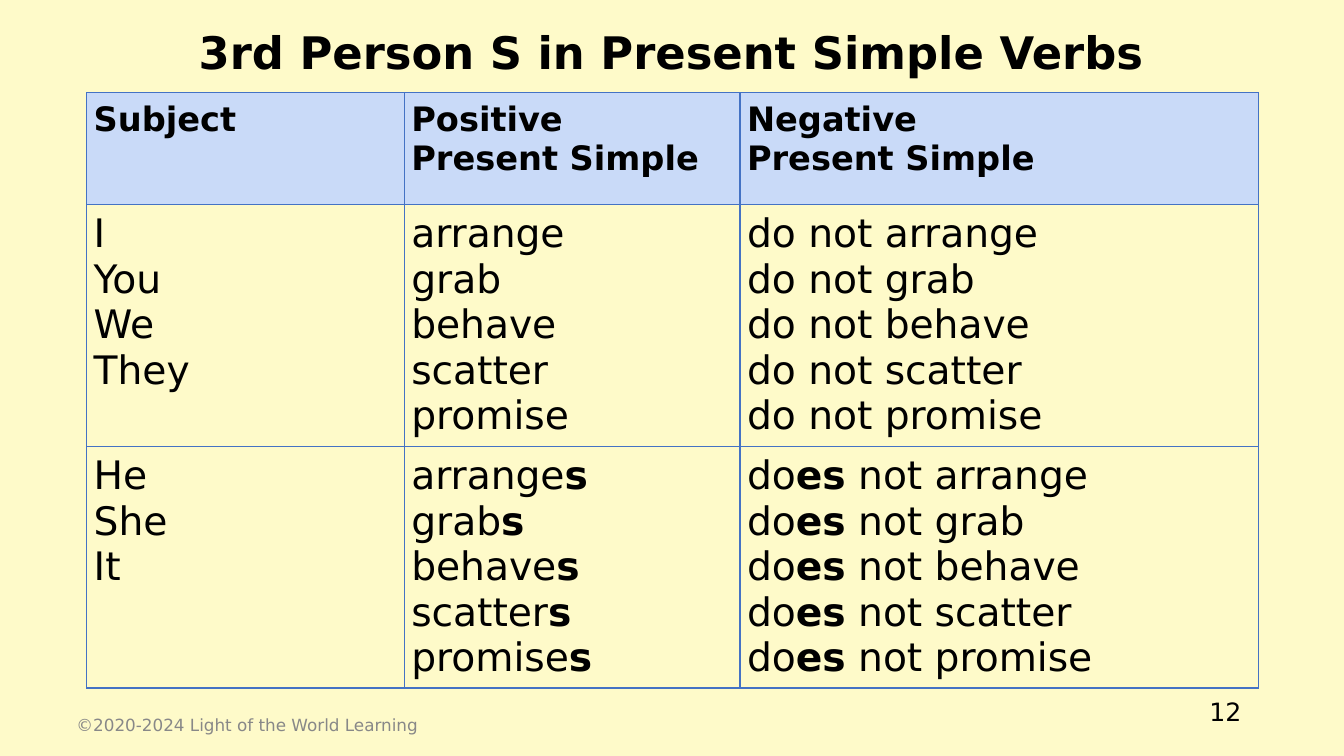
from lxml.etree import SubElement
from pptx import Presentation
from pptx.dml.color import RGBColor as RGB
from pptx.enum.text import MSO_ANCHOR as Anchor, PP_ALIGN as Align
from pptx.oxml.ns import qn
from pptx.util import Inches as In, Pt


def write(frame, lines, size, color="000000", bold=False, align=Align.LEFT):
    """Fill a frame with lines; every second part between asterisks is bold."""
    frame.word_wrap = True
    for i, line in enumerate(lines):
        para = frame.add_paragraph() if i else frame.paragraphs[0]
        para.alignment = align
        for j, part in enumerate(line.split("*")):
            if part:
                run = para.add_run()
                run.text = part
                look = {"name": "DejaVu Sans", "size": Pt(size), "bold": bold or j % 2 == 1}
                for key, value in look.items():
                    setattr(run.font, key, value)
                run.font.color.rgb = RGB.from_string(color)


def edge(cell, color):
    """Draw a thin line on all four sides of a cell."""
    props = cell._tc.get_or_add_tcPr()
    for i, side in enumerate(("a:lnL", "a:lnR", "a:lnT", "a:lnB")):
        line = props.makeelement(qn(side), {"w": str(Pt(1))})
        fill = SubElement(line, qn("a:solidFill"))
        SubElement(fill, qn("a:srgbClr"), val=color)
        props.insert(i, line)


prs = Presentation()
prs.slide_width, prs.slide_height = In(13.33), In(7.5)
slide = prs.slides.add_slide(prs.slide_layouts[5])
back = slide.background.fill
back.solid()
back.fore_color.rgb = RGB.from_string("FEFAC9")

# Title
title = slide.shapes.title
title.left, title.top, title.width, title.height = In(0.19), In(0.09), In(12.94), In(0.84)
title.text_frame.vertical_anchor = Anchor.MIDDLE
write(title.text_frame, ["3rd Person S in Present Simple Verbs"], 32, bold=True, align=Align.CENTER)

# Verb table: the last group spans two rows
verbs = ["arrange", "grab", "behave", "scatter", "promise"]
rows = [
    [["Subject"], ["Positive", "Present Simple"], ["Negative", "Present Simple"]],
    [["I", "You", "We", "They"], verbs, [f"do not {v}" for v in verbs]],
    [["He", "She", "It"], [f"{v}*s*" for v in verbs], [f"do*es* not {v}" for v in verbs]],
]
wide, high = [3.15, 3.33, 5.14], [1.11, 2.39, 0.11, 2.28]
table = slide.shapes.add_table(len(high), len(wide), In(0.86), In(0.92),
                               In(sum(wide)), In(sum(high))).table
table.first_row = table.horz_banding = False
for col, size in zip(table.columns, wide):
    col.width = In(size)
for row, size in zip(table.rows, high):
    row.height = In(size)
for c in range(len(wide)):
    table.cell(2, c).merge(table.cell(3, c))

for cell in table.iter_cells():
    for side in ("left", "right", "top", "bottom"):
        setattr(cell, f"margin_{side}", In(0.07))
    cell.fill.background()
    edge(cell, "4472C4")
for r, row in enumerate(rows):
    for c, lines in enumerate(row):
        cell = table.cell(r, c)
        write(cell.text_frame, lines, 28 if r else 24, bold=r == 0)
        if r == 0:
            cell.fill.solid()
            cell.fill.fore_color.rgb = RGB.from_string("C9DAF8")

# Page number and footer
notes = [
    ((0.79, 6.76, 11.62, 0.6), "12", 18, "000000", Align.RIGHT),
    ((0.66, 6.99, 4.5, 0.4), "©2020-2024 Light of the World Learning", 12, "888888", Align.LEFT),
]
for place, text, size, color, align in notes:
    frame = slide.shapes.add_textbox(*map(In, place)).text_frame
    frame.vertical_anchor = Anchor.MIDDLE
    write(frame, [text], size, color, align=align)

prs.save("out.pptx")
